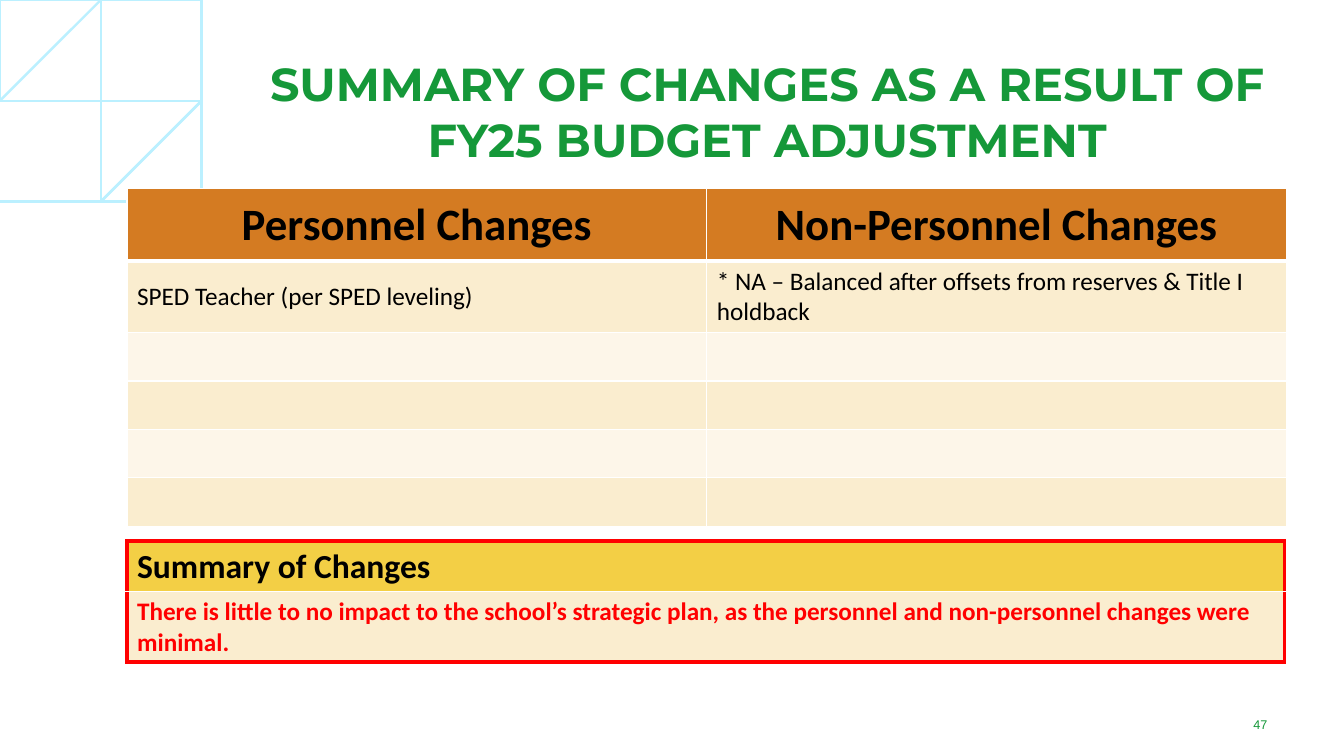
from dataclasses import dataclass
from math import asin, cos, pi, sin

from lxml.etree import SubElement
from pptx import Presentation
from pptx.dml.color import RGBColor
from pptx.enum.text import MSO_ANCHOR as Anchor, PP_ALIGN as Align
from pptx.oxml.ns import qn
from pptx.util import Inches, Pt


@dataclass(frozen=True)
class Theme:
    green: str = "159839"
    sky: str = "BBF0FF"
    orange: str = "D47B22"
    yellow: str = "F3CF45"
    cream: str = "FAEDCF"
    pale: str = "FDF6E9"
    red: str = "FF0000"
    black: str = "000000"
    white: str = "FFFFFF"
    head: str = "Montserrat"
    body: str = "Calibri"
    foot: str = "Arial"
    title: int = 33
    large: int = 32
    mid: int = 24
    text: int = 18
    small: int = 9


T = Theme()


def rgb(code):
    return RGBColor.from_string(code)


def write(frame, words, size, color=T.black, font=T.body, bold=False,
          align=Align.LEFT):
    para = frame.paragraphs[0]
    para.alignment = align
    run = para.add_run()
    run.text = words
    run.font.name = font
    run.font.size = Pt(size)
    run.font.bold = bold
    run.font.color.rgb = rgb(color)


def paint(cell, fill, **lines):
    """Fill a cell; lines maps L, R, T or B to (colour, points)."""
    props = cell._tc.get_or_add_tcPr()
    for side in "LRTB":
        color, width = lines.get(side, (T.white, 1))
        line = SubElement(props, qn(f"a:ln{side}"), w=str(Pt(width)))
        solid = SubElement(line, qn("a:solidFill"))
        SubElement(solid, qn("a:srgbClr"), val=color)
    cell.fill.solid()
    cell.fill.fore_color.rgb = rgb(fill)


def add_grid(slide, box, heights, cols):
    left, top, width = box
    grid = slide.shapes.add_table(
        len(heights), cols, Inches(left), Inches(top), Inches(width),
        Inches(sum(heights))).table
    for col in grid.columns:
        col.width = Inches(width / cols)
    for row, height in zip(grid.rows, heights):
        row.height = Inches(height)
    return grid


def add_rings(slide, left, top, size, count=17):
    """Draw concentric arcs cut off by the slide's top left corner."""
    drop, first = 0.16, 0.31
    step = (size - first) / (count - 1)
    pen = None
    for ring in range(count):
        radius = first + ring * step
        start = asin(drop / radius)
        parts = 4 + ring // 2
        turns = [start + (pi / 2 - start) * i / parts
                 for i in range(parts + 1)]
        points = [(left + radius * cos(a), top + radius * sin(a) - drop)
                  for a in turns]
        if pen is None:
            pen = slide.shapes.build_freeform(*points[0], scale=Inches(1))
        else:
            pen.move_to(*points[0])
        pen.add_line_segments(points[1:], close=False)
    rings = pen.convert_to_shape()
    rings.shadow.inherit = False
    rings.fill.background()
    rings.line.color.rgb = rgb(T.sky)
    rings.line.width = Pt(1.75)


def add_title(slide, left, top, width, height):
    title = slide.shapes.title
    title.left, title.top = Inches(left), Inches(top)
    title.width, title.height = Inches(width), Inches(height)
    frame = title.text_frame
    frame.word_wrap = True
    frame.vertical_anchor = Anchor.TOP
    write(frame, "SUMMARY OF CHANGES AS A RESULT OF FY25 BUDGET ADJUSTMENT",
          T.title, T.green, T.head, True, Align.CENTER)


def add_changes(slide, left, top, width):
    heads = ["Personnel Changes", "Non-Personnel Changes"]
    items = ["SPED Teacher (per SPED leveling)",
             "* NA – Balanced after offsets from reserves & Title I holdback"]
    grid = add_grid(slide, (left, top, width), [0.72] + [0.48] * 5, 2)
    for cell, head in zip(grid.rows[0].cells, heads):
        paint(cell, T.orange, B=(T.white, 3))
        write(cell.text_frame, head, T.large, bold=True, align=Align.CENTER)
    for at in range(1, len(grid.rows)):
        for cell in grid.rows[at].cells:
            edge = {"T": (T.white, 3)} if at == 1 else {}
            paint(cell, T.cream if at % 2 else T.pale, **edge)
    for cell, item in zip(grid.rows[1].cells, items):
        write(cell.text_frame, item, T.text)
    for cell in grid.iter_cells():
        cell.vertical_anchor = Anchor.MIDDLE


def add_summary(slide, left, top, width):
    grid = add_grid(slide, (left, top, width), [0.41, 0.41], 1)
    head, note = grid.iter_cells()
    edge = (T.red, 3)
    paint(head, T.yellow, L=edge, R=edge, T=edge)
    paint(note, T.cream, L=edge, R=edge, B=edge)
    write(head.text_frame, "Summary of Changes", T.mid, bold=True)
    write(note.text_frame,
          "There is little to no impact to the school’s strategic plan, "
          "as the personnel and non-personnel changes were minimal.",
          T.text, T.red, bold=True)


def add_number(slide, left, top, width, height):
    frame = slide.shapes.add_textbox(
        Inches(left), Inches(top), Inches(width), Inches(height)).text_frame
    frame.word_wrap = True
    frame.vertical_anchor = Anchor.MIDDLE
    write(frame, "47", T.small, T.green, T.foot, align=Align.CENTER)


def main():
    deck = Presentation()
    deck.slide_width, deck.slide_height = Inches(13.33), Inches(7.5)
    slide = deck.slides.add_slide(deck.slide_layouts[5])
    add_rings(slide, 0, 0, 2.45)
    add_title(slide, 2.46, 0.5, 10.3, 1.47)
    add_changes(slide, 1.26, 1.87, 11.5)
    add_number(slide, 11.96, 7.04, 1.08, 0.3)
    add_summary(slide, 1.26, 5.37, 11.48)
    deck.save("out.pptx")


if __name__ == "__main__":
    main()
